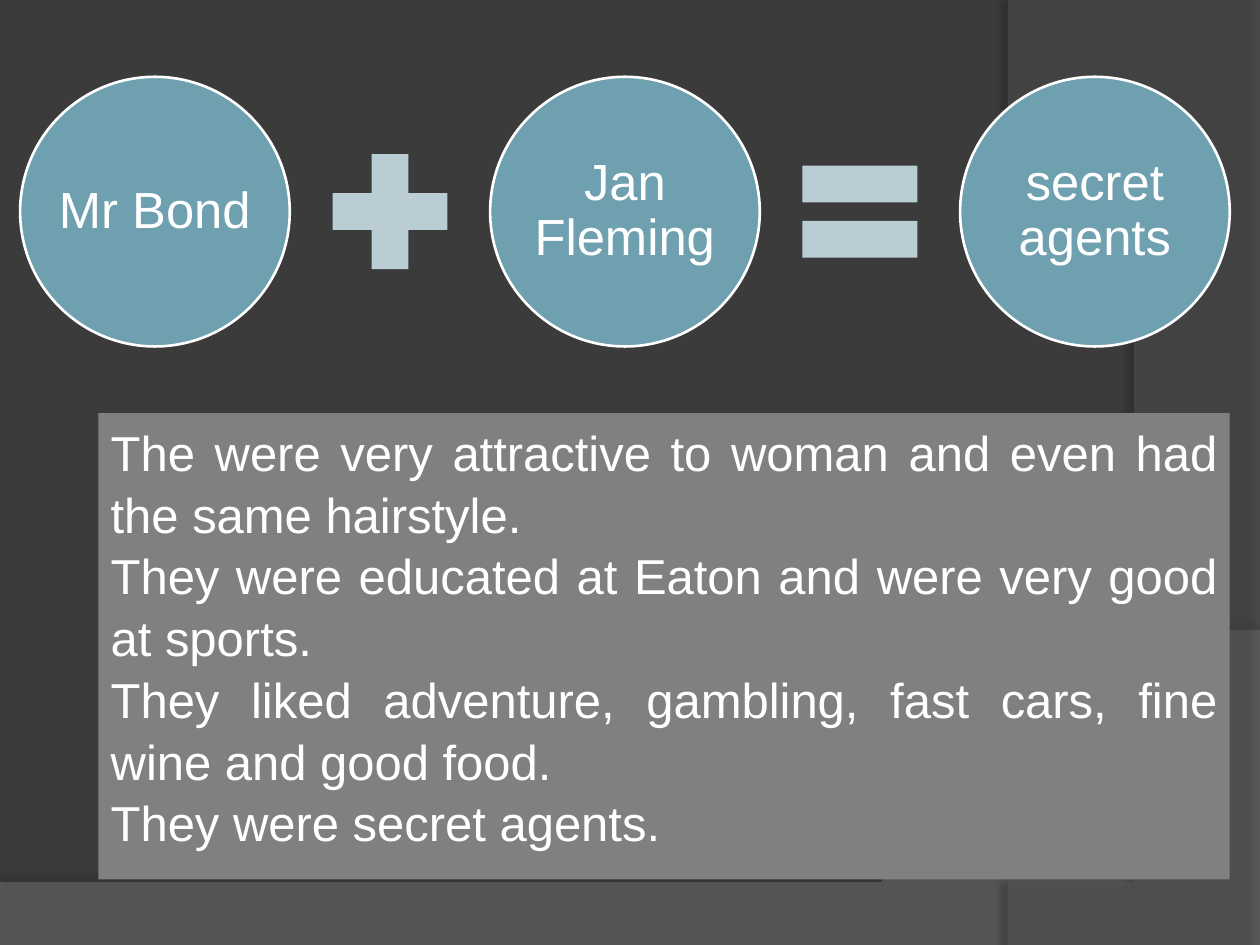
from dataclasses import dataclass

from lxml import etree
from pptx import Presentation, util as u
from pptx.dml.color import RGBColor
from pptx.enum import shapes, text
from pptx.oxml import ns

Inches = u.Inches


@dataclass(frozen=True)
class Theme:
    background: str = "3B3B3B"
    wave: str = "7F7F7F"
    arc: str = "5E5E5E"
    panel: str = "808080"
    circle: str = "6EA0B0"
    operator: str = "BACDD4"
    light: str = "FFFFFF"
    shadow: str = "000000"
    font: str = "Arial"
    body_size: int = 28
    circle_size: int = 29


THEME = Theme()
CIRCLE_SIZE, OPERATOR_SIZE = 2.14, 1.24
CIRCLE_LEFT, CIRCLE_TOP, CIRCLE_STEP = 0.16, 0.61, 3.73
TERMS = ["Mr Bond", "Jan Fleming", "secret agents"]
OPERATORS = [shapes.MSO_SHAPE.MATH_PLUS, shapes.MSO_SHAPE.MATH_EQUAL]
FACTS = [
    "The were very attractive to woman and even had the same hairstyle.",
    "They were educated at Eaton and were very good at sports.",
    "They liked adventure, gambling, fast cars, fine wine and good food.",
    "They were secret agents.",
]


def bezier(*points, steps=40):
    def at(t):
        weights = ((1 - t) ** 3, 3 * t * (1 - t) ** 2, 3 * t * t * (1 - t), t ** 3)
        return tuple(sum(w * p[axis] for w, p in zip(weights, points)) for axis in (0, 1))
    return [at(i / steps) for i in range(steps + 1)]


def style(sp, fill, line=None):
    sp.shadow.inherit = False
    sp.fill.solid()
    sp.fill.fore_color.rgb = RGBColor.from_string(fill)
    if line:
        sp.line.color.rgb = RGBColor.from_string(line)
        sp.line.width = u.Pt(1.5)
    else:
        sp.line.fill.background()


def add_alpha(color, percent):
    etree.SubElement(color, ns.qn("a:alpha"), val=str(percent * 1000))


def add_backdrop(s, points, fill, opacity, shadow_opacity, distance, angle):
    builder = s.shapes.build_freeform(*points[0], scale=Inches(1))
    builder.add_line_segments(points[1:], close=True)
    sp = builder.convert_to_shape()
    style(sp, fill)
    props = sp.element.spPr
    add_alpha(props.find(ns.qn("a:solidFill"))[0], opacity)
    shadow = etree.SubElement(
        props.find(ns.qn("a:effectLst")), ns.qn("a:outerShdw"),
        blurRad=str(u.Pt(4)), dist=str(u.Pt(distance)),
        dir=str(angle * 60000), algn="ctr", rotWithShape="0")
    add_alpha(etree.SubElement(shadow, ns.qn("a:srgbClr"), val=THEME.shadow), shadow_opacity)


def add_shape(s, kind, left, top, width, height, fill, line=None):
    sp = s.shapes.add_shape(kind, Inches(left), Inches(top), Inches(width), Inches(height))
    style(sp, fill, line)
    return sp


def write(sp, lines, size, align, anchor, spacing, inset=None):
    tf = sp.text_frame
    tf.word_wrap = True
    tf.vertical_anchor = anchor
    if inset is not None:
        tf.margin_left = tf.margin_right = tf.margin_top = tf.margin_bottom = Inches(inset)
    for i, line in enumerate(lines):
        p = tf.add_paragraph() if i else tf.paragraphs[0]
        p.alignment = align
        p.line_spacing = spacing
        r = p.add_run()
        r.text = line
        r.font.name = THEME.font
        r.font.size = u.Pt(size)
        r.font.color.rgb = RGBColor.from_string(THEME.light)


def add_term(s, left, label):
    box = (left, CIRCLE_TOP, CIRCLE_SIZE, CIRCLE_SIZE)
    add_shape(s, shapes.MSO_SHAPE.OVAL, *box, THEME.circle, THEME.light)
    sp = s.shapes.add_textbox(*map(Inches, box))
    write(sp, [label], size=THEME.circle_size, align=text.PP_ALIGN.CENTER,
          anchor=text.MSO_ANCHOR.MIDDLE, spacing=0.9, inset=0.04)


def add_equation(s):
    gap = CIRCLE_STEP - CIRCLE_SIZE
    operator_top = CIRCLE_TOP + (CIRCLE_SIZE - OPERATOR_SIZE) / 2
    for i, label in enumerate(TERMS):
        left = CIRCLE_LEFT + i * CIRCLE_STEP
        add_term(s, left, label)
        if i < len(OPERATORS):
            operator_left = left + CIRCLE_SIZE + (gap - OPERATOR_SIZE) / 2
            add_shape(s, OPERATORS[i], operator_left, operator_top,
                      OPERATOR_SIZE, OPERATOR_SIZE, THEME.operator)


def add_facts(s):
    sp = add_shape(s, shapes.MSO_SHAPE.RECTANGLE, 0.78, 3.28, 8.98, 3.7, THEME.panel)
    write(sp, FACTS, size=THEME.body_size, align=text.PP_ALIGN.JUSTIFY,
          anchor=text.MSO_ANCHOR.TOP, spacing=1.05)


def main():
    prs = Presentation()
    prs.slide_width, prs.slide_height = Inches(10), Inches(7.5)
    s = prs.slides.add_slide(prs.slide_layouts[6])
    s.background.fill.solid()
    s.background.fill.fore_color.rgb = RGBColor.from_string(THEME.background)
    wave = [(0, 7.51), (10, 7.51)] + bezier((10, 5.2), (5.59, 7.29), (3.91, 7.19), (0, 7.05))
    arc = [(10, 0.02), (10, 7.5)] + bezier((8.21, 7.5), (9.35, 6.19), (10.18, 3), (8, 0))
    add_backdrop(s, wave, THEME.wave, 45, shadow_opacity=35, distance=3.5, angle=270)
    add_backdrop(s, arc, THEME.arc, 40, shadow_opacity=45, distance=4, angle=180)
    add_facts(s)
    add_equation(s)
    prs.save("out.pptx")


if __name__ == "__main__":
    main()
